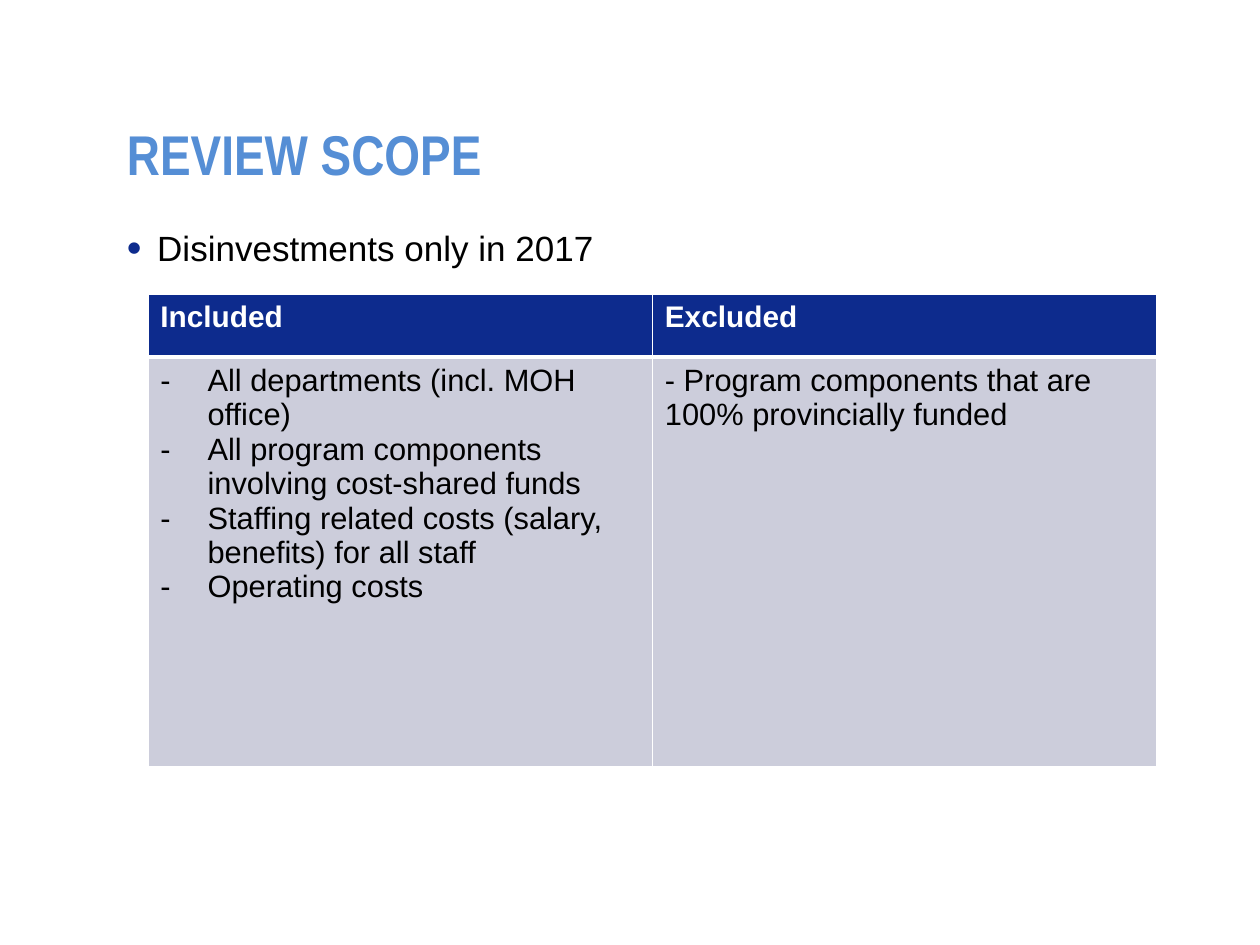
import pptx
import pptx.util
import pptx.dml.color
import pptx.enum.text
import pptx.oxml.ns
from lxml import etree

Cm, Pt = pptx.util.Cm, pptx.util.Pt
RGB = pptx.dml.color.RGBColor

SKY = RGB(0x55, 0x8E, 0xD5)
NAVY = RGB(0x0D, 0x2B, 0x8D)
GREY = RGB(0xCC, 0xCD, 0xDB)
BLACK = RGB(0, 0, 0)
WHITE = RGB(255, 255, 255)

HEADS = ["Included", "Excluded"]
SCOPE = [
    "All departments (incl. MOH office)",
    "All program components involving cost-shared funds",
    "Staffing related costs (salary, benefits) for all staff",
    "Operating costs",
]
LIMITS = ["- Program components that are 100% provincially funded"]


def add_node(parent, tag, **attrs):
    node = etree.SubElement(parent, pptx.oxml.ns.qn(tag))
    for key, value in attrs.items():
        node.set(key, str(value))
    return node


def add_mark(para, char, color, indent, size=100):
    """Give a paragraph a bullet with a hanging indent."""
    props = para._p.get_or_add_pPr()
    props.set("marL", str(int(indent)))
    props.set("indent", str(-int(indent)))
    add_node(add_node(props, "a:buClr"), "a:srgbClr", val=color)
    add_node(props, "a:buSzPct", val=size * 1000)
    add_node(props, "a:buFont", typeface="Arial")
    add_node(props, "a:buChar", char=char)


def style(para, size, color, bold=False, face="Arial"):
    para.alignment = pptx.enum.text.PP_ALIGN.LEFT
    for run in para.runs:
        font = run.font
        font.name, font.size, font.bold = face, Pt(size), bold
        font.color.rgb = color


def add_text(slide, text, top, height):
    frame = slide.shapes.add_textbox(Cm(2.31), Cm(top), Cm(21), Cm(height)).text_frame
    frame.word_wrap = True
    frame.text = text
    return frame


def add_lines(cell, top, bottom):
    """Draw white borders, with widths in points for top and bottom."""
    props = cell._tc.get_or_add_tcPr()
    for side, width in zip("LRTB", (1, 1, top, bottom)):
        line = add_node(props, f"a:ln{side}", w=int(Pt(width)))
        add_node(add_node(line, "a:solidFill"), "a:srgbClr", val=WHITE)


def fill_cell(cell, lines, fill, size, color, bold=False, mark=None):
    cell.fill.solid()
    cell.fill.fore_color.rgb = fill
    cell.text_frame.text = "\n".join(lines)
    for para in cell.text_frame.paragraphs:
        if mark:
            add_mark(para, mark, color, Cm(0.95))
        style(para, size, color, bold)


def add_grid(slide):
    grid = slide.shapes.add_table(2, 2, Cm(2.98), Cm(5.93), Cm(20.34), Cm(9.52)).table
    grid.rows[0].height, grid.rows[1].height = Cm(1.27), Cm(8.25)
    for col, (head, lines, mark) in enumerate(zip(HEADS, (SCOPE, LIMITS), ("-", None))):
        top, body = grid.cell(0, col), grid.cell(1, col)
        add_lines(top, 1, 3)
        add_lines(body, 3, 1)
        fill_cell(top, [head], NAVY, 17, WHITE, bold=True)
        fill_cell(body, lines, GREY, 17.6, BLACK, mark=mark)


def main():
    deck = pptx.Presentation()
    deck.slide_width, deck.slide_height = Cm(25.4), Cm(19.05)
    slide = deck.slides.add_slide(deck.slide_layouts[6])

    # Title
    title = add_text(slide, "REVIEW SCOPE", 1.12, 2.77)
    title.vertical_anchor = pptx.enum.text.MSO_ANCHOR.BOTTOM
    style(title.paragraphs[0], 32, SKY, True, "Arial Narrow")

    # Lead point
    lead = add_text(slide, "Disinvestments only in 2017", 4.45, 11.86).paragraphs[0]
    add_mark(lead, "•", NAVY, Cm(0.61), 120)
    style(lead, 20, BLACK)

    # Scope table
    add_grid(slide)
    deck.save("out.pptx")


if __name__ == "__main__":
    main()
